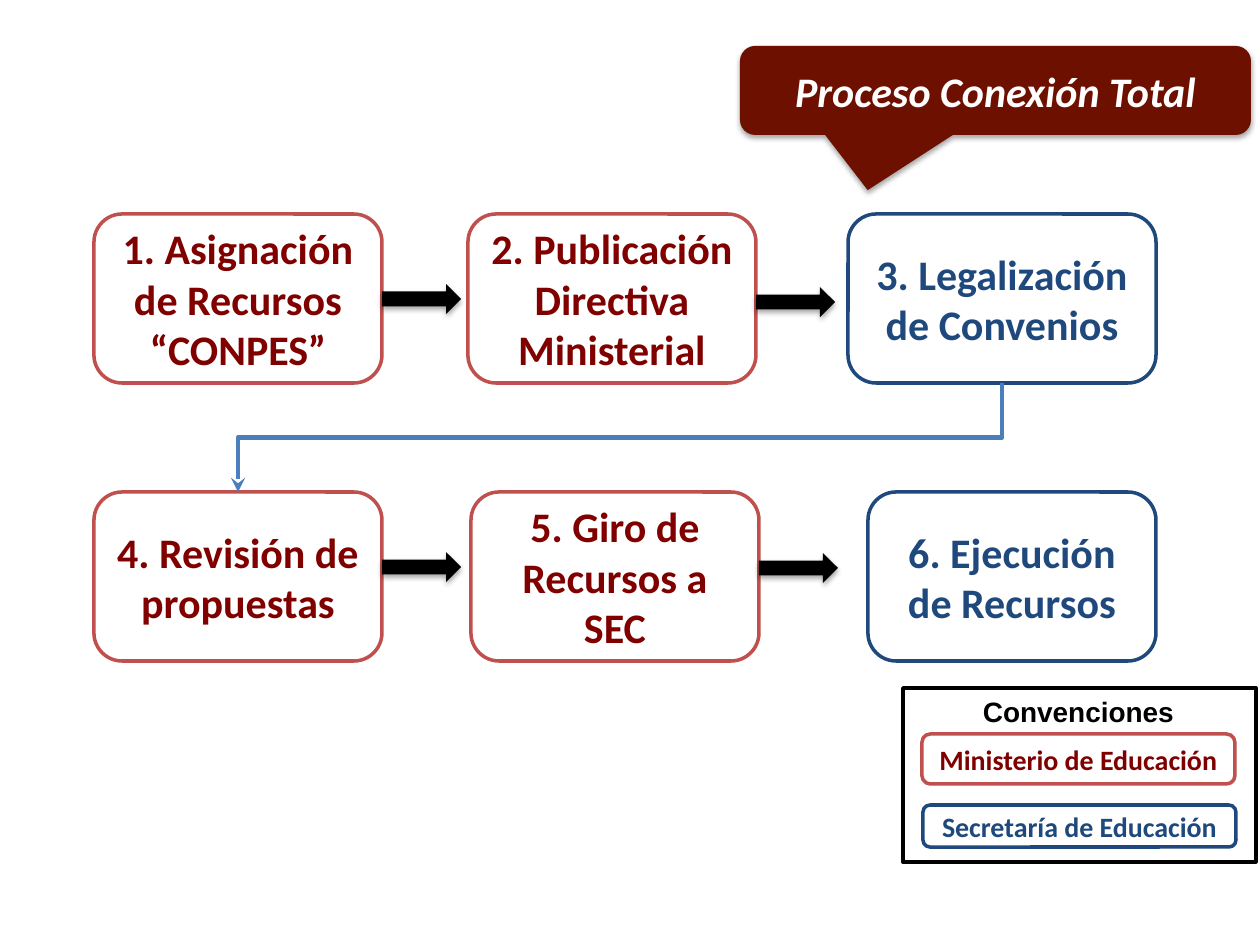
from lxml import etree
from pptx import Presentation
from pptx.dml.color import RGBColor
from pptx.enum.shapes import MSO_CONNECTOR, MSO_SHAPE
from pptx.enum.text import MSO_ANCHOR, PP_ALIGN
from pptx.oxml import parse_xml
from pptx.oxml.ns import nsdecls, qn
from pptx.util import Emu, Pt

ROUND = MSO_SHAPE.ROUNDED_RECTANGLE
RECT = MSO_SHAPE.RECTANGLE
ARROW = MSO_SHAPE.RIGHT_ARROW
CALLOUT = MSO_SHAPE.ROUNDED_RECTANGULAR_CALLOUT
ELBOW = MSO_CONNECTOR.ELBOW
MIDDLE = MSO_ANCHOR.MIDDLE
CENTER = PP_ALIGN.CENTER

SCALE = 914400 / 126
WHITE, BLACK, WINE, STEEL = "FFFFFF", "000000", "6E1000", "4B7EBC"
RED = ("C0504D", "800000")
BLUE = ("1F497D", "1F497D")
SHADOW = (
    f'<a:effectLst {nsdecls("a")}><a:outerShdw blurRad="39370" dist="22860" '
    'dir="5400000" rotWithShape="0"><a:srgbClr val="000000">'
    '<a:alpha val="35000"/></a:srgbClr></a:outerShdw></a:effectLst>'
)


def px(size):
    return Emu(round(size * SCALE))


def color(code):
    return RGBColor.from_string(code)


class Board:
    """Holds the style and the slide, and draws each kind of element."""

    def __init__(self, slide):
        self.slide = slide
        self.font = "Calibri"
        self.edge = Pt(2)

    def letter(self, shape, text, size, ink, font=None, slant=None):
        frame = shape.text_frame
        frame.word_wrap = True
        para = frame.paragraphs[0]
        para.text = text
        para.alignment = CENTER
        face = para.font
        face.name = font or self.font
        face.size = Pt(size)
        face.bold = True
        face.italic = slant
        face.color.rgb = color(ink)
        return frame

    def shape(self, kind, area, fill=None, line=None):
        item = self.slide.shapes.add_shape(kind, *map(px, area))
        item.shadow.inherit = False
        if fill:
            item.fill.solid()
            item.fill.fore_color.rgb = color(fill)
        else:
            item.fill.background()
        if line:
            item.line.color.rgb = color(line)
            item.line.width = self.edge
        else:
            item.line.fill.background()
        return item

    def box(self, area, text, tone, size=24):
        line, ink = tone
        item = self.shape(ROUND, area, WHITE, line)
        self.letter(item, text, size, ink).vertical_anchor = MIDDLE
        return item

    def raised(self, kind, area, fill):
        item = self.shape(kind, area, fill)
        props = item._element.spPr
        props.replace(props.find(qn("a:effectLst")), parse_xml(SHADOW))
        return item

    def arrow(self, left, top):
        self.raised(ARROW, (left, top, 79, 30), BLACK)

    def callout(self, area, text, tip):
        item = self.raised(CALLOUT, area, WINE)
        for spot, value in enumerate(tip):
            item.adjustments[spot] = value
        self.letter(item, text, 24, WHITE, slant=True).vertical_anchor = MIDDLE

    def label(self, area, text):
        item = self.slide.shapes.add_textbox(*map(px, area))
        self.letter(item, text, 16, BLACK, "Arial")

    def elbow(self, start, end):
        item = self.slide.shapes.add_connector(ELBOW, 0, 0, 0, 0)
        item.begin_connect(start, 2)
        item.end_connect(end, 0)
        wide, high = item.width, item.height
        shift = (wide - high) // 2
        item.left, item.top = item.left + shift, item.top - shift
        item.width, item.height = high, wide
        props = item._element.spPr
        frame = props.find(qn("a:xfrm"))
        frame.attrib.pop("flipH", None)
        frame.set("rot", "5400000")
        item.line.color.rgb = color(STEEL)
        item.line.width = Pt(2.75)
        tail = etree.SubElement(props.find(qn("a:ln")), qn("a:tailEnd"))
        tail.set("type", "stealth")
        etree.SubElement(props, qn("a:effectLst"))


def main():
    deck = Presentation()
    deck.slide_width, deck.slide_height = px(1260), px(945)
    board = Board(deck.slides.add_slide(deck.slide_layouts[6]))

    steps = [
        (94, 214, 288, "1. Asignación de Recursos “CONPES”", RED),
        (468, 214, 288, "2. Publicación Directiva Ministerial", RED),
        (848, 214, 308, "3. Legalización de Convenios", BLUE),
        (94, 492, 288, "4. Revisión de propuestas", RED),
        (471, 492, 288, "5. Giro de Recursos a SEC", RED),
        (868, 492, 288, "6. Ejecución de Recursos", BLUE),
    ]
    boxes = [
        board.box((left, top, wide, 169), text, tone)
        for left, top, wide, text, tone in steps
    ]
    for left, top in [(382, 284), (756, 287), (382, 552), (759, 553)]:
        board.arrow(left, top)
    board.elbow(boxes[2], boxes[3])

    board.shape(RECT, (903, 688, 353, 174), line=BLACK)
    board.label((922, 688, 313, 47), "Convenciones")
    board.box((922, 734, 313, 50), "Ministerio de Educación", RED, 16)
    board.box((923, 805, 313, 42), "Secretaría de Educación", BLUE, 16)

    tip = (-0.25, 1.12, 0.17)
    board.callout((740, 46, 511, 89), "Proceso Conexión Total", tip)
    deck.save("out.pptx")


if __name__ == "__main__":
    main()
